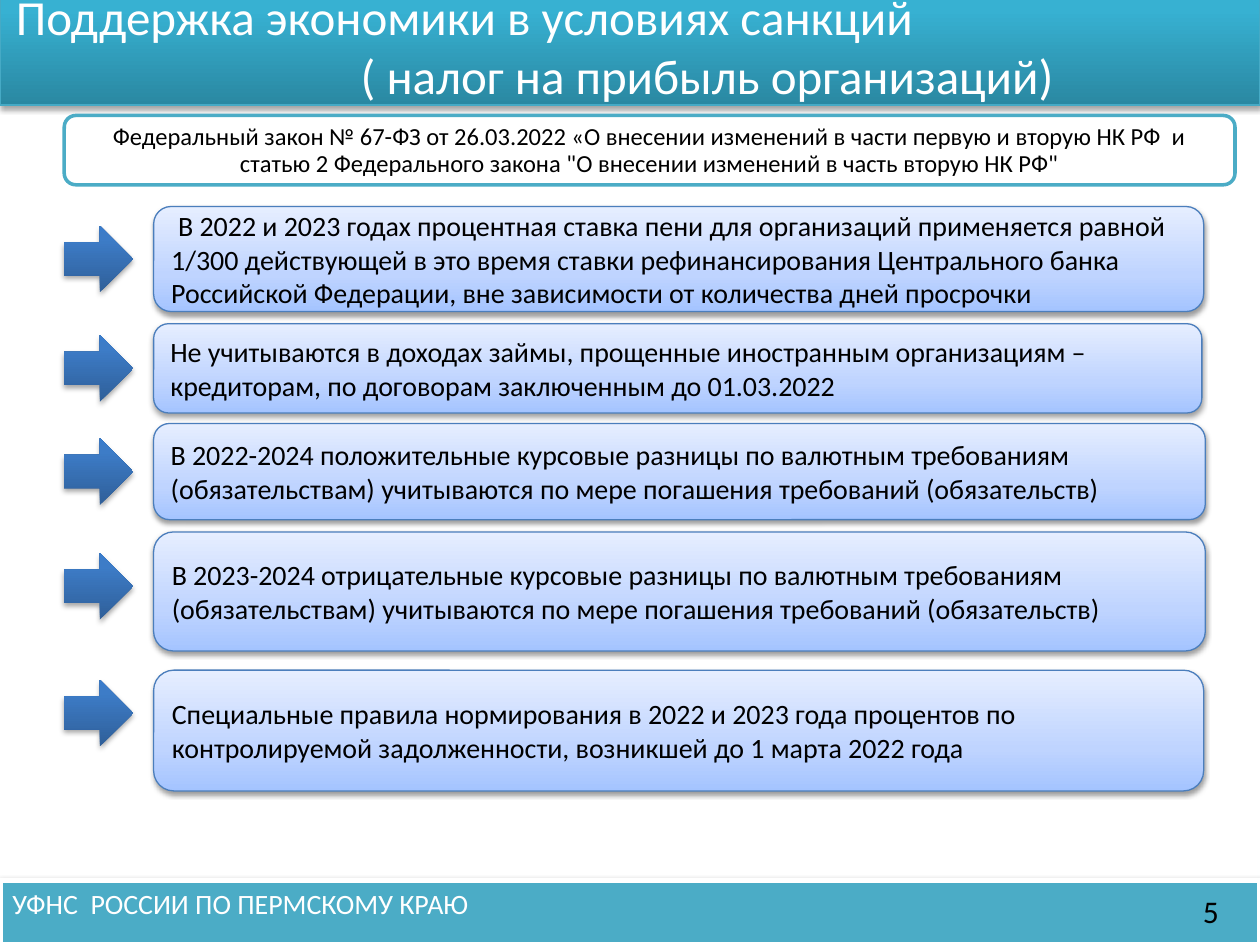
from dataclasses import dataclass

from lxml import etree
from pptx import Presentation
from pptx.dml.color import RGBColor
from pptx.enum.shapes import MSO_SHAPE
from pptx.enum.text import MSO_ANCHOR, PP_ALIGN
from pptx.oxml.ns import qn
from pptx.util import Pt

RECT, ROUNDED, ARROW = MSO_SHAPE.RECTANGLE, MSO_SHAPE.ROUNDED_RECTANGLE, MSO_SHAPE.RIGHT_ARROW
TOP, MIDDLE = MSO_ANCHOR.TOP, MSO_ANCHOR.MIDDLE
LEFT, CENTER, RIGHT = PP_ALIGN.LEFT, PP_ALIGN.CENTER, PP_ALIGN.RIGHT


@dataclass(frozen=True)
class Theme:
    font: str = "Calibri"
    white: str = "FFFFFF"
    black: str = "000000"
    teal: str = "4BACC6"
    title_line: str = "46AAC5"
    card_line: str = "4B7EBC"
    title_fill: tuple = ((0, "2A88A2"), (80, "37B1D2"), (100, "34B4D6"))
    card_fill: tuple = ((0, "A4C4FF"), (35, "BFD4FF"), (100, "E6EEFF"))
    arrow_fill: tuple = ((0, "2F5F99"), (80, "3D7CC7"), (100, "3A7CCB"))
    title_size: int = 28
    number_size: int = 18
    body_size: int = 16
    law_size: int = 14


THEME = Theme()

# top, width, height, arrow shift from the card's middle, first-line indent, text
CARDS = [
    (118, 600, 60, 0, 4,
     "В 2022 и 2023 годах процентная ставка пени для организаций применяется равной "
     "1/300 действующей в это время ставки рефинансирования Центрального банка "
     "Российской Федерации, вне зависимости от количества дней просрочки"),
    (185, 599, 51, 0, 0,
     "Не учитываются в доходах займы, прощенные иностранным организациям –"
     "кредиторам, по договорам заключенным до 01.03.2022"),
    (242, 601, 55, 0, 0,
     "В 2022-2024 положительные курсовые разницы по валютным требованиям "
     "(обязательствам) учитываются по мере погашения требований (обязательств)"),
    (304, 601, 68, -3, 0,
     "В 2023-2024 отрицательные курсовые разницы по валютным требованиям "
     "(обязательствам) учитываются по мере погашения требований (обязательств)"),
    (383, 600, 69, -10, 0,
     "Специальные правила нормирования в 2022 и 2023 года процентов по "
     "контролируемой задолженности, возникшей до 1 марта 2022 года"),
]


def add_color(parent, value):
    return etree.SubElement(parent, qn("a:srgbClr"), val=value)


def set_gradient(sp, stops):
    """Fill with a vertical gradient whose first stop lies at the bottom."""
    sp.fill.gradient()
    sp.fill.gradient_angle = 90
    gs_list = sp._element.spPr.find(qn("a:gradFill")).find(qn("a:gsLst"))
    for gs in list(gs_list):
        gs_list.remove(gs)
    for pos, value in stops:
        add_color(etree.SubElement(gs_list, qn("a:gs"), pos=str(pos * 1000)), value)


def add_shadow(sp, distance, opacity):
    effects = sp._element.spPr.find(qn("a:effectLst"))
    shadow = etree.SubElement(effects, qn("a:outerShdw"), blurRad=str(Pt(3.1)),
                              dist=str(Pt(distance)), dir="5400000", rotWithShape="0")
    etree.SubElement(add_color(shadow, THEME.black), qn("a:alpha"), val=str(opacity * 1000))


def add_box(slide, kind, box, fill, line=None, line_width=0.75):
    sp = slide.shapes.add_shape(kind, *map(Pt, box))
    sp.shadow.inherit = False
    if isinstance(fill, tuple):
        set_gradient(sp, fill)
    else:
        sp.fill.solid()
        sp.fill.fore_color.rgb = RGBColor.from_string(fill)
    if line:
        sp.line.color.rgb = RGBColor.from_string(line)
        sp.line.width = Pt(line_width)
    else:
        sp.line.fill.background()
    return sp


def write(sp, lines, size, color, align=LEFT, anchor=MIDDLE):
    """Write one paragraph per line and return the paragraphs."""
    tf = sp.text_frame
    tf.word_wrap = True
    tf.vertical_anchor = anchor
    tf.text = "\n".join(lines)
    for p in tf.paragraphs:
        p.alignment = align
        p.font.name = THEME.font
        p.font.size = Pt(size)
        p.font.color.rgb = RGBColor.from_string(color)
    return tf.paragraphs


def add_title(slide, box):
    sp = add_box(slide, RECT, box, THEME.title_fill, THEME.title_line)
    add_shadow(sp, 1.8, 35)
    lines = ["Поддержка экономики в условиях санкций", "( налог на прибыль организаций)"]
    paragraphs = write(sp, lines, THEME.title_size, THEME.white)
    for p, margin in zip(paragraphs, (2, 199)):
        p._p.get_or_add_pPr().set("marL", str(Pt(margin)))


def add_law(slide, box):
    sp = add_box(slide, ROUNDED, box, THEME.white, THEME.teal, 2)
    text = ("Федеральный закон № 67-ФЗ от 26.03.2022 «О внесении изменений в части первую "
            "и вторую НК РФ  и статью 2 Федерального закона \"О внесении изменений в часть "
            "вторую НК РФ\"")
    p = write(sp, [text], THEME.law_size, THEME.black, CENTER)[0]
    p.line_spacing = Pt(15.8)


def add_card(slide, box, text, indent):
    sp = add_box(slide, ROUNDED, box, THEME.card_fill, THEME.card_line)
    add_shadow(sp, 1.6, 38)
    p = write(sp, [text], THEME.body_size, THEME.black)[0]
    p._p.get_or_add_pPr().set("indent", str(Pt(indent)))


def add_measures(slide, arrow_left, card_left):
    arrow_width, arrow_height = 39.6, 38
    for top, width, height, shift, indent, text in CARDS:
        arrow_top = top + (height - arrow_height) / 2 + shift
        arrow = add_box(slide, ARROW, (arrow_left, arrow_top, arrow_width, arrow_height),
                        THEME.arrow_fill)
        add_shadow(arrow, 1.8, 35)
        add_card(slide, (card_left, top, width, height), text, indent)


def add_footer(slide, box):
    left, top, width, height = box
    sp = add_box(slide, RECT, box, THEME.teal, THEME.white, 3)
    add_shadow(sp, 1.6, 38)
    write(sp, ["УФНС  РОССИИ ПО ПЕРМСКОМУ КРАЮ"], THEME.body_size, THEME.white, anchor=TOP)
    number = slide.shapes.add_textbox(Pt(left + width - 68.4), Pt(top - 2.5), Pt(52), Pt(39.5))
    write(number, ["5"], THEME.number_size, THEME.black, RIGHT)


def main():
    prs = Presentation()
    prs.slide_width, prs.slide_height = Pt(720), Pt(540)
    slide = prs.slides.add_slide(prs.slide_layouts[6])
    add_title(slide, (0, -8, 720, 68))
    add_footer(slide, (0, 503, 720, 37))
    add_measures(slide, 36.5, 87.8)
    add_law(slide, (36.7, 66, 669, 39.6))
    prs.save("out.pptx")


if __name__ == "__main__":
    main()
